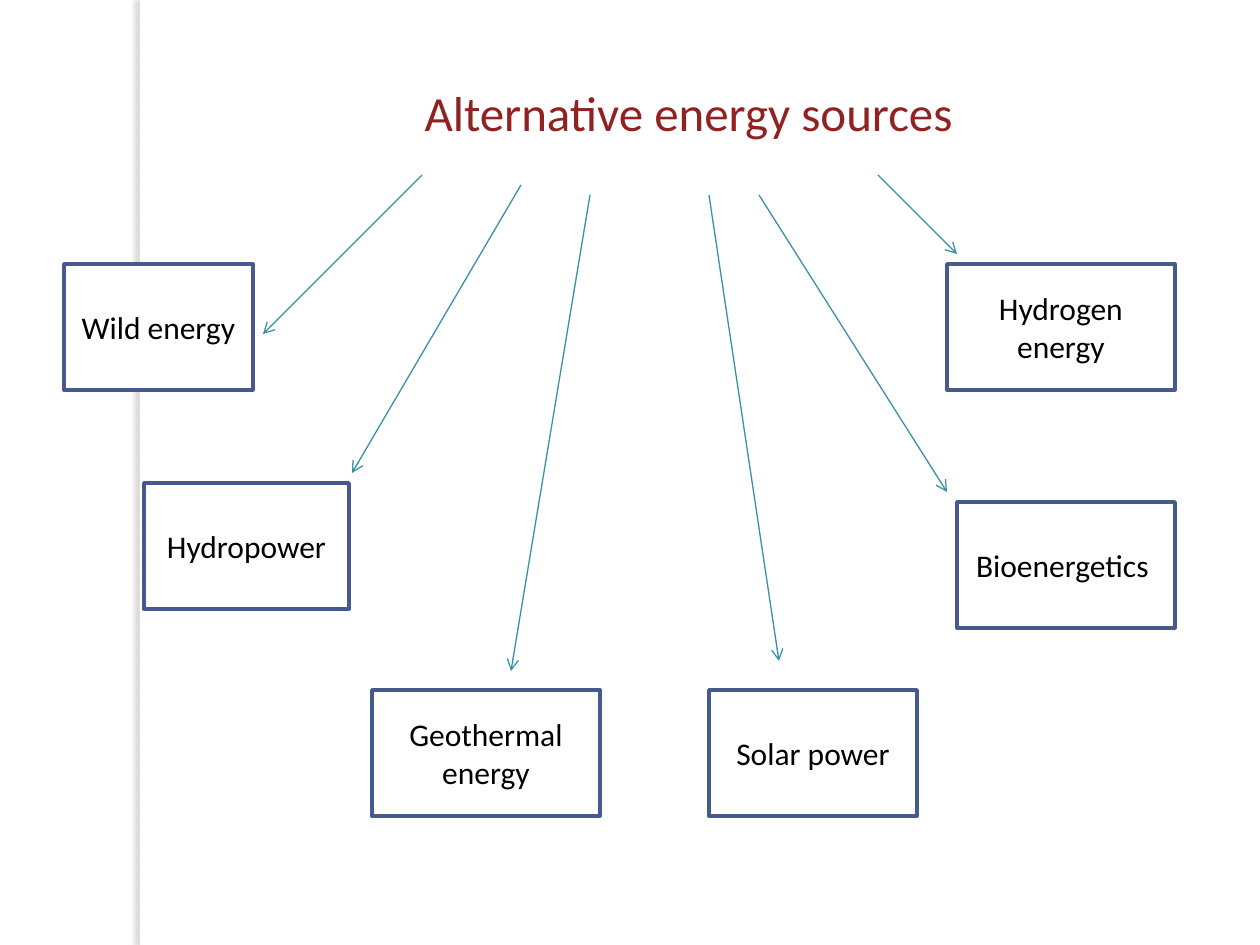
"""Build the slide on alternative energy sources."""
from lxml import etree
from pptx import Presentation, util as u
from pptx.dml.color import RGBColor
from pptx.enum import shapes as s, text as t
from pptx.oxml import parse_xml
from pptx.oxml.ns import qn

SIZE = (1260, 945)
TITLE = ("Alternative energy sources", (275, 76, 827, 72))
STRIPE = (140, 0, 10, 945)
HIGH = 126
BOXES = [
    ("Wild energy", 64, 264, 189),
    ("Hydropower", 144, 483, 205),
    ("Geothermal energy", 372, 690, 228),
    ("Solar power", 709, 690, 208),
    ("Bioenergetics ", 957, 502, 218),
    ("Hydrogen energy", 947, 264, 228),
]
ARROWS = [
    (422, 175, 263, 334),
    (521, 185, 352, 473),
    (590, 195, 511, 671),
    (709, 195, 779, 661),
    (759, 195, 947, 492),
    (878, 175, 957, 254),
]
SHADE = """<a:effectLst xmlns:a="http://schemas.openxmlformats.org/drawingml/2006/main">
<a:outerShdw blurRad="38100" dist="38100" dir="10800000" algn="tl" rotWithShape="0">
<a:srgbClr val="736F63"><a:alpha val="25000"/></a:srgbClr></a:outerShdw></a:effectLst>"""


def px(*vals):
    return [u.Emu(round(v * 914400 / 126)) for v in vals]


def hue(code):
    return RGBColor.from_string(code)


def write(shape, words, size, color):
    frame = shape.text_frame
    frame.text = words
    frame.word_wrap = True
    frame.vertical_anchor = t.MSO_ANCHOR.MIDDLE
    para = frame.paragraphs[0]
    para.alignment = t.PP_ALIGN.CENTER
    para.font.name = "Calibri"
    para.font.size = u.Pt(size)
    para.font.color.rgb = hue(color)


def rect(slide, place):
    shape = slide.shapes.add_shape(s.MSO_SHAPE.RECTANGLE, *px(*place))
    shape.shadow.inherit = False
    shape.fill.solid()
    shape.fill.fore_color.rgb = hue("FFFFFF")
    return shape


def add_stripe(slide):
    shape = rect(slide, STRIPE)
    shape.line.fill.background()
    props = shape._element.spPr
    props.remove(props.find(qn("a:effectLst")))
    props.append(parse_xml(SHADE))


def add_box(slide, words, x, y, wide):
    shape = rect(slide, (x, y, wide, HIGH))
    shape.line.color.rgb = hue("475A8D")
    shape.line.width = u.Pt(2)
    write(shape, words, 18, "000000")


def add_arrow(slide, ends):
    link = slide.shapes.add_connector(s.MSO_CONNECTOR.STRAIGHT, *px(*ends))
    link.line.color.rgb = hue("3891A7")
    link.line.width = u.Pt(0.75)
    etree.SubElement(link.line._get_or_add_ln(), qn("a:tailEnd"), type="arrow")
    etree.SubElement(link._element.spPr, qn("a:effectLst"))


def main():
    deck = Presentation()
    deck.slide_width, deck.slide_height = px(*SIZE)
    slide = deck.slides.add_slide(deck.slide_layouts[5])
    add_stripe(slide)
    title = slide.shapes.title
    words, place = TITLE
    title.left, title.top, title.width, title.height = px(*place)
    write(title, words, 28, "922222")
    for box in BOXES:
        add_box(slide, *box)
    for ends in ARROWS:
        add_arrow(slide, ends)
    deck.save("out.pptx")


if __name__ == "__main__":
    main()
